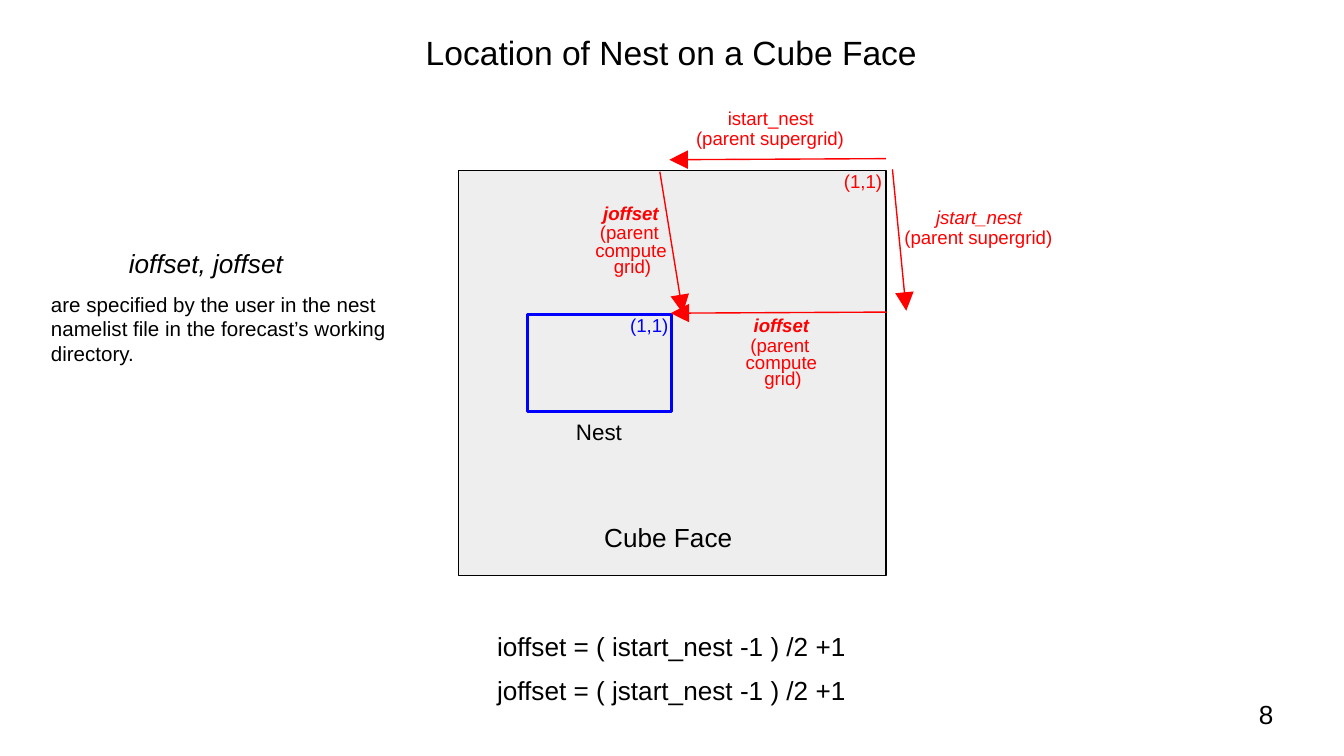
import pptx
import pptx.util
import pptx.dml.color
import pptx.enum.shapes
import pptx.enum.text
import pptx.oxml.ns
import lxml.etree

Pt = pptx.util.Pt
COLORS = {"black": "000000", "red": "FF0000", "blue": "0000FF", "face": "EEEEEE"}


def rgb(name):
    return pptx.dml.color.RGBColor.from_string(COLORS[name])


def add_run(p, text, size, color="black", bold=False, italic=False):
    r = p.add_run()
    r.text = text
    f = r.font
    f.name, f.size, f.bold, f.italic = "Arial", Pt(size), bold, italic
    f.color.rgb = rgb(color)


def add_text(s, text, x, y, w, h, size=10, wrap=False, middle=False, **fmt):
    tf = s.shapes.add_textbox(Pt(x), Pt(y), Pt(w), Pt(h)).text_frame
    tf.word_wrap = wrap
    tf.margin_left = tf.margin_right = tf.margin_top = tf.margin_bottom = Pt(7.2)
    anchor = pptx.enum.text.MSO_ANCHOR
    tf.vertical_anchor = anchor.MIDDLE if middle else anchor.TOP
    add_run(tf.paragraphs[0], text, size, **fmt)


def add_box(s, x, y, w, h, line, width):
    sp = s.shapes.add_shape(pptx.enum.shapes.MSO_SHAPE.RECTANGLE,
                            Pt(x), Pt(y), Pt(w), Pt(h))
    sp.shadow.inherit = False
    sp.fill.solid()
    sp.fill.fore_color.rgb = rgb("face")
    sp.line.color.rgb = rgb(line)
    sp.line.width = Pt(width)


def add_arrow(s, x1, y1, x2, y2):
    c = s.shapes.add_connector(pptx.enum.shapes.MSO_CONNECTOR.STRAIGHT,
                               Pt(x1), Pt(y1), Pt(x2), Pt(y2))
    c.line.color.rgb = rgb("red")
    c.line.width = Pt(0.75)
    qn = pptx.oxml.ns.qn
    ln = c.line._get_or_add_ln()
    lxml.etree.SubElement(ln, qn("a:tailEnd"), type="triangle", w="lg", len="lg")
    lxml.etree.SubElement(c._element.spPr, qn("a:effectLst"))


def add_offset_label(s, name, x, y):
    """Bold offset name above three tightly set lines."""
    add_text(s, name, x + 4.3, y, 45.4, 25.2, color="red", bold=True, italic=True)
    for text, dx, dy, w in [("(parent", 2.5, 10.4, 49.7),
                            ("compute", 0, 19.8, 56.9),
                            ("grid)", 10, 28.4, 34.6)]:
        add_text(s, text, x + dx, y + dy, w, 25.2, color="red")


def add_start_label(s, name, x, y, italic=False):
    add_text(s, name, x + 17, y, 64.1, 28.8, color="red", italic=italic)
    add_text(s, "(parent supergrid)", x, y + 10.8, 97.9, 28.8, color="red")


def main():
    prs = pptx.Presentation()
    prs.slide_width, prs.slide_height = Pt(720), Pt(405)
    s = prs.slides.add_slide(prs.slide_layouts[6])

    # Title
    add_text(s, "Location of Nest on a Cube Face", 221, 10.1, 278, 36.7, size=18)

    # Cube face and nest
    add_box(s, 245.6, 91.5, 229, 216.8, "black", 0.75)
    add_box(s, 282.4, 168.5, 77.2, 51.9, "blue", 1.5)
    add_text(s, "Cube Face", 316.6, 272.2, 86.4, 32.4, size=14)
    add_text(s, "Nest", 301.5, 216.7, 45.4, 28.8, size=12)

    # Arrows
    for ends in [(475, 167.2, 359.3, 167.8), (353.5, 92, 365.8, 167.8),
                 (474.6, 85, 358.6, 85.6), (478.1, 90.7, 485.5, 166.5)]:
        add_arrow(s, *ends)

    # Arrow labels
    add_start_label(s, "istart_nest", 365.8, 51.1)
    add_start_label(s, "jstart_nest", 477.4, 104.4, italic=True)
    add_offset_label(s, "ioffset", 392.4, 162.2)
    add_offset_label(s, "joffset", 311.8, 102)

    # Corner indices
    add_text(s, "(1,1)", 445, 85, 37.4, 25.2, color="red")
    add_text(s, "(1,1)", 330.5, 162, 37.4, 25.2, color="blue")

    # Formulas
    for i, n in enumerate("ij"):
        add_text(s, f"{n}offset = ( {n}start_nest -1 ) /2 +1",
                 259.2, 330.5 + 23.8 * i, 201.6, 36.7, size=14)

    # Side note
    add_text(s, "ioffset, joffset", 61.9, 125.3, 102.2, 28.8, size=14, italic=True)
    add_text(s, "are specified by the user in the nest namelist file in the "
                "forecast’s working directory.",
             20.2, 149, 204.5, 51.8, size=11, wrap=True)

    # Slide number
    add_text(s, "8", 667.4, 367.2, 43.2, 31, size=14, wrap=True, middle=True)

    prs.save("out.pptx")


if __name__ == "__main__":
    main()
